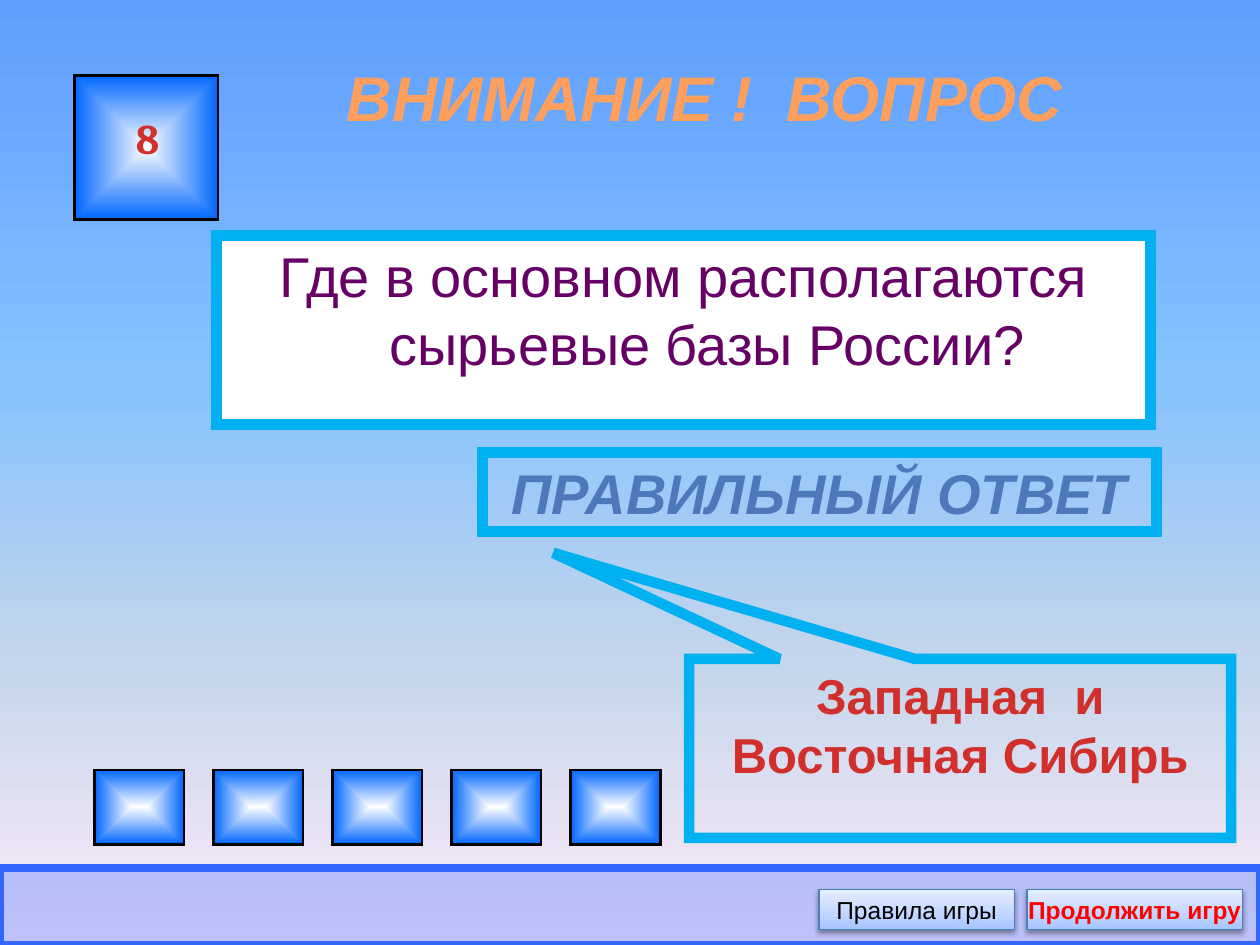
from pptx import Presentation
from pptx.dml.color import RGBColor
from pptx.enum.shapes import MSO_SHAPE
from pptx.enum.text import MSO_ANCHOR, PP_ALIGN
from pptx.oxml import parse_xml
from pptx.oxml.ns import nsdecls, qn
from pptx.util import Inches, Pt

SKY = [(0, "5E9EFF"), (40, "85C2FF"), (70, "C4D6EB"), (100, "FFEBFA")]
GLOW = [(0, "FFFFFF"), (100, "0066FF")]
PALE = [(0, "A4C4FF"), (35, "BFD4FF"), (100, "E6EEFF")]
RED = [(0, "FC7C7A"), (75, "D02F2C"), (100, "C70500")]
GOLD = [(0, "FFA367"), (25, "FF9F5D"), (50, "F38E3A"), (75, "FF9F5D"), (100, "FFA367")]
STEEL = [(0, "7494C9"), (49, "4D79BC"), (50, "346AAA"), (92, "325F94"), (100, "315D91")]
CYAN = "00B0F0"


def color(code):
    return RGBColor.from_string(code)


def grad(stops, angle=90):
    marks = "".join(
        f'<a:gs pos="{pos * 1000}"><a:srgbClr val="{code}"/></a:gs>' for pos, code in stops
    )
    if angle is None:
        way = '<a:path path="rect"><a:fillToRect l="50000" t="50000" r="50000" b="50000"/></a:path>'
    else:
        way = f'<a:lin ang="{angle * 60000}" scaled="0"/>'
    return f'<a:gradFill {nsdecls("a")} rotWithShape="1"><a:gsLst>{marks}</a:gsLst>{way}</a:gradFill>'


def paint(fill, node, tone, angle=90):
    if isinstance(tone, str):
        fill.solid()
        fill.fore_color.rgb = color(tone)
    else:
        fill.background()
        node.replace(node.find(qn("a:noFill")), parse_xml(grad(tone, angle)))


def backdrop(slide):
    slide._element.cSld.insert(0, parse_xml(
        f'<p:bg {nsdecls("p", "a")}><p:bgPr>{grad(SKY)}<a:effectLst/></p:bgPr></p:bg>'
    ))


def block(slide, box, edge, width, kind=MSO_SHAPE.RECTANGLE):
    shape = slide.shapes.add_shape(kind, *map(Inches, box))
    shape._element.remove(shape._element.find(qn("p:style")))
    shape.shadow.inherit = False
    shape.line.color.rgb = color(edge)
    shape.line.width = Pt(width)
    shape.line._ln.append(parse_xml(f'<a:miter {nsdecls("a")} lim="800000"/>'))
    return shape


def label(slide, box):
    return slide.shapes.add_textbox(*map(Inches, box))


def write(shape, text, size, tone, bold=False, italic=False, face="Arial",
          wrap=True, anchor=MSO_ANCHOR.TOP):
    frame = shape.text_frame
    frame.text = text
    frame.word_wrap = wrap
    frame.vertical_anchor = anchor
    para = frame.paragraphs[0]
    para.alignment = PP_ALIGN.CENTER
    run = para.runs[0]
    font = run.font
    font.name, font.size = face, Pt(size)
    font.bold, font.italic = bold, italic
    paint(font.fill, run._r.get_or_add_rPr(), tone)
    return para


def tile(slide, box):
    shape = block(slide, box, "000000", 1.5, MSO_SHAPE.ACTION_BUTTON_CUSTOM)
    paint(shape.fill, shape._element.spPr, GLOW, None)


def window(shape):
    shape._element.set("useBgFill", "1")


def button(slide, left, width, text, tone, bold):
    shape = block(slide, (left, 7.06, width, 0.32), "4B7EBC", 0.75)
    props = shape._element.spPr
    paint(shape.fill, props, PALE, 270)
    props.find(qn("a:effectLst")).append(parse_xml(
        f'<a:outerShdw {nsdecls("a")} blurRad="{Pt(3.1)}" dist="{Pt(1.6)}" dir="5400000" '
        'rotWithShape="0"><a:srgbClr val="000000"><a:alpha val="38000"/></a:srgbClr></a:outerShdw>'
    ))
    write(shape, text, 14, tone, bold, wrap=False, anchor=MSO_ANCHOR.MIDDLE)


def query(slide):
    shape = block(slide, (1.72, 1.87, 7.41, 1.5), CYAN, 6)
    paint(shape.fill, shape._element.spPr, "FFFFFF")
    para = write(shape, "Где в основном располагаются сырьевые базы России?", 32, "660066")
    props = para._p.get_or_add_pPr()
    props.set("marL", str(Inches(0.38)))
    props.set("indent", str(-Inches(0.38)))
    props.insert(0, parse_xml(f'<a:spcBef {nsdecls("a")}><a:spcPct val="20000"/></a:spcBef>'))


def reply(slide):
    head = block(slide, (3.83, 3.59, 5.35, 0.63), CYAN, 6)
    window(head)
    write(head, "ПРАВИЛЬНЫЙ ОТВЕТ", 32, STEEL, True, True, wrap=False, anchor=MSO_ANCHOR.MIDDLE)
    call = block(slide, (5.47, 5.23, 4.3, 1.42), CYAN, 6, MSO_SHAPE.RECTANGULAR_CALLOUT)
    window(call)
    call.rotation = 180
    call.adjustments[0] = 0.751
    call.adjustments[1] = 1.093
    write(call, "Западная  и Восточная Сибирь", 28, RED, True)
    call.text_frame._txBody.bodyPr.set("rot", "10800000")


def footer(slide):
    band = block(slide, (0, 6.89, 10, 0.61), "3366FF", 4.5)
    props = band._element.spPr
    paint(band.fill, props, "3366FF")
    tint = props.find(qn("a:solidFill")).find(qn("a:srgbClr"))
    tint.append(parse_xml(f'<a:alpha {nsdecls("a")} val="31000"/>'))
    button(slide, 6.5, 1.55, "Правила игры", "000000", False)
    button(slide, 8.15, 1.71, "Продолжить игру", "FF0000", True)


def main():
    deck = Presentation()
    deck.slide_width, deck.slide_height = Inches(10), Inches(7.5)
    slide = deck.slides.add_slide(deck.slide_layouts[6])
    backdrop(slide)
    write(label(slide, (2.4, 0.3, 6.38, 0.93)), "ВНИМАНИЕ !  ВОПРОС", 36, GOLD,
          True, True, anchor=MSO_ANCHOR.MIDDLE)
    query(slide)
    tile(slide, (0.59, 0.6, 1.14, 1.14))
    write(label(slide, (0.98, 0.84, 0.31, 0.63)), "8", 24, RED, True, face="Cambria", wrap=False)
    for step in range(5):
        tile(slide, (0.75 + 0.945 * step, 6.11, 0.71, 0.59))
    reply(slide)
    footer(slide)
    deck.save("out.pptx")


if __name__ == "__main__":
    main()
